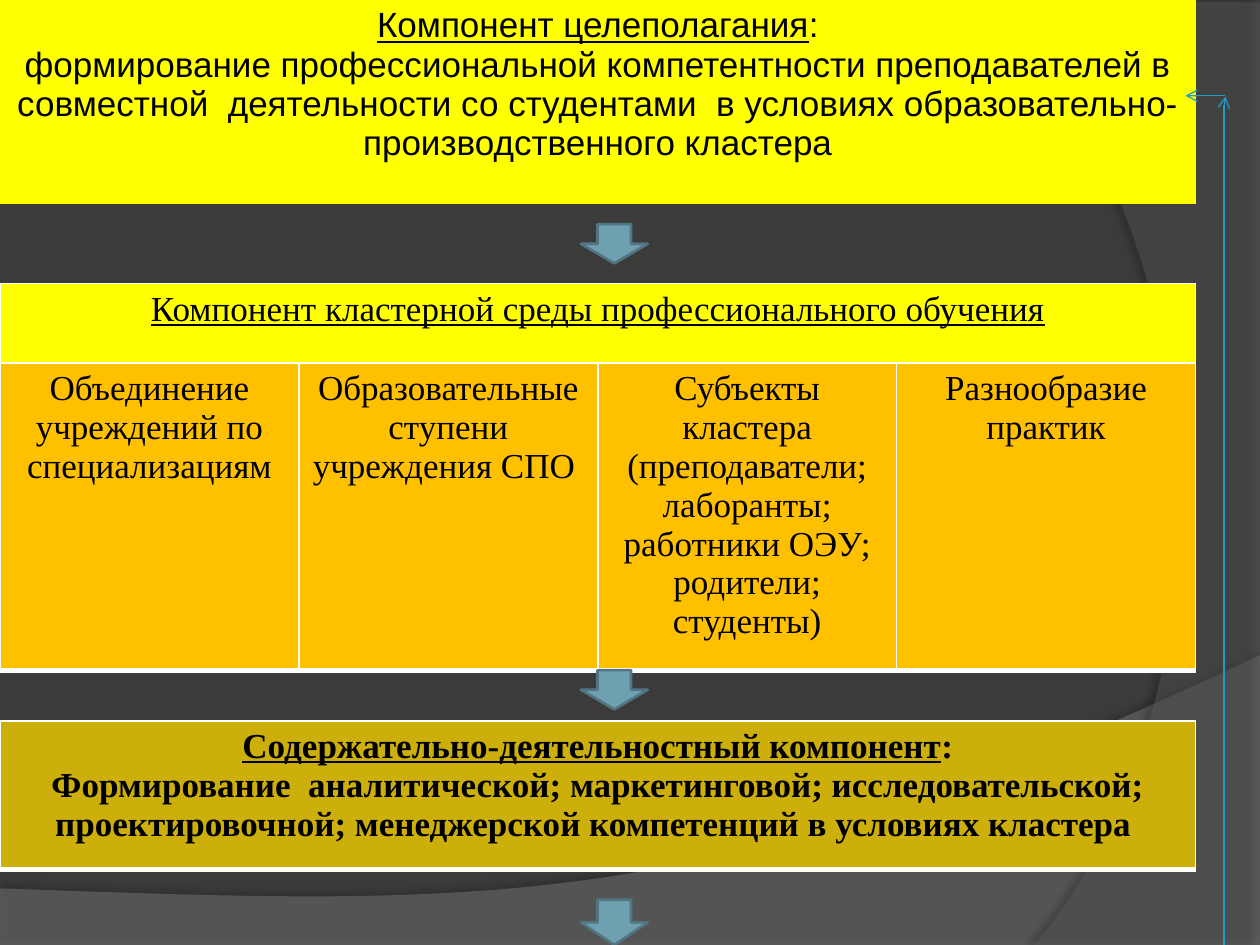
from lxml.etree import SubElement
from pptx import Presentation
from pptx.dml.color import RGBColor
from pptx.enum.shapes import MSO_CONNECTOR, MSO_SHAPE
from pptx.enum.text import PP_ALIGN
from pptx.oxml import parse_xml
from pptx.oxml.ns import nsdecls, qn
from pptx.util import Cm, Pt

THEME = {
    "background": "3B3B3B", "wave": "7F7F7F", "side": "5E5E5E", "shadow": "000000",
    "text": "000000", "border": "FFFFFF", "yellow": "FFFF00", "orange": "FFC000",
    "olive": "CCAF0A", "arrow": "6EA0B0", "arrow_line": "517682", "link": "239BC2",
    "size": Pt(20), "sans": "Arial", "serif": "Times New Roman",
}


def rgb(name):
    return RGBColor.from_string(THEME[name])


def finish_connector(c):
    c.line.color.rgb = rgb("link")
    c.line.width = Pt(0.75)
    SubElement(c.line._get_or_add_ln(), qn("a:tailEnd"), type="arrow")
    SubElement(c.element.spPr, qn("a:effectLst"))


prs = Presentation()
prs.slide_width, prs.slide_height = Cm(25.4), Cm(19.05)
s = prs.slides.add_slide(prs.slide_layouts[6])
s.background.fill.solid()
s.background.fill.fore_color.rgb = rgb("background")

backdrops = [
    ("wave", 45, [(0, 17.91), (0, 19.08), (25.4, 19.08)],
     [(25.4, 13.21), (14.2, 18.52), (9.93, 18.26), (0, 17.91)], (35, 3.5, 270)),
    ("side", 40, [(25.4, 0.05), (25.4, 19.05)],
     [(20.85, 19.05), (23.75, 15.72), (25.86, 7.62), (20.32, 0)], (45, 4, 180)),
]
steps = 40
for color, alpha, corners, curve, (shadow_alpha, distance, angle) in backdrops:
    points = list(corners)
    for i in range(steps + 1):
        t = i / steps
        weights = ((1 - t) ** 3, 3 * t * (1 - t) ** 2, 3 * t ** 2 * (1 - t), t ** 3)
        points.append(tuple(sum(w * q[axis] for w, q in zip(weights, curve)) for axis in (0, 1)))
    points = [(Cm(x), Cm(y)) for x, y in points]
    builder = s.shapes.build_freeform(*points[0])
    builder.add_line_segments(points[1:], close=True)
    sp = builder.convert_to_shape()
    sp.fill.solid()
    sp.fill.fore_color.rgb = rgb(color)
    sp.line.fill.background()
    sp.shadow.inherit = False
    fill = sp.element.spPr.find(qn("a:solidFill"))
    SubElement(fill[0], qn("a:alpha"), val=str(alpha * 1000))
    sp.element.spPr.find(qn("a:effectLst")).append(parse_xml(
        f'<a:outerShdw {nsdecls("a")} blurRad="{Pt(4)}" dist="{Pt(distance)}" '
        f'dir="{angle * 60000}" algn="ctr" rotWithShape="0">'
        f'<a:srgbClr val="{THEME["shadow"]}"><a:alpha val="{shadow_alpha * 1000}"/></a:srgbClr>'
        f'</a:outerShdw>'))

tables = [
    (0, 4.11, "yellow", "sans", False, False, [[
        [("Компонент целеполагания", True), (":", False)],
        [("формирование профессиональной компетентности преподавателей в совместной  "
          "деятельности со студентами  в условиях образовательно-производственного кластера",
          False)],
    ]]),
    (5.72, 1.8, "yellow", "serif", False, True, [[
        [("Компонент кластерной среды профессионального обучения", True)],
    ]]),
    (7.32, 6.2, "orange", "serif", False, True, [
        [[("Объединение учреждений по специализациям", False)]],
        [[("Образовательные ступени учреждения СПО ", False)]],
        [[("Субъекты кластера (преподаватели; лаборанты; работники ОЭУ; родители; студенты)",
           False)]],
        [[("Разнообразие практик", False)]],
    ]),
    (14.53, 3, "olive", "serif", True, True, [[
        [("Содержательно-деятельностный компонент", True), (":", False)],
        [("Формирование  аналитической; маркетинговой; исследовательской; проектировочной; "
          "менеджерской компетенций в условиях кластера ", False)],
    ]]),
]
borders = {"lnL": 1, "lnR": 1, "lnT": 1, "lnB": 3}
for top, height, color, font, bold, bordered, cells in tables:
    table = s.shapes.add_table(1, len(cells), 0, Cm(top), Cm(24.1), Cm(height)).table
    table.first_row = table.horz_banding = False
    for cell, paragraphs in zip(table.rows[0].cells, cells):
        cell.fill.solid()
        cell.fill.fore_color.rgb = rgb(color)
        tc_pr = cell._tc.get_or_add_tcPr()
        paint = (f'<a:solidFill><a:srgbClr val="{THEME["border"]}"/></a:solidFill>'
                 if bordered else "<a:noFill/>")
        for i, (side, width) in enumerate(borders.items()):
            tc_pr.insert(i, parse_xml(
                f'<a:{side} {nsdecls("a")} w="{Pt(width)}">{paint}</a:{side}>'))
        tf = cell.text_frame
        for i, runs in enumerate(paragraphs):
            p = tf.add_paragraph() if i else tf.paragraphs[0]
            p.alignment = PP_ALIGN.CENTER
            for text, underline in runs:
                r = p.add_run()
                r.text = text
                r.font.color.rgb = rgb("text")
                style = {"name": THEME[font], "size": THEME["size"],
                         "bold": bold, "underline": underline}
                for key, value in style.items():
                    setattr(r.font, key, value)

for top, height in [(4.52, 0.79), (13.51, 0.79), (18.14, 0.91)]:
    sp = s.shapes.add_shape(MSO_SHAPE.DOWN_ARROW, Cm(11.71), Cm(top), Cm(1.35), Cm(height))
    sp.shadow.inherit = False
    sp.fill.solid()
    sp.fill.fore_color.rgb = rgb("arrow")
    sp.line.color.rgb = rgb("arrow_line")
    sp.line.width = Pt(1.5)

riser = s.shapes.add_connector(MSO_CONNECTOR.ELBOW, Cm(33.25), Cm(10.52), Cm(16.13), Cm(10.49))
riser.element.spPr.find(qn("a:xfrm")).set("rot", str(90 * 60000))
adjustments = riser.element.spPr.find(qn("a:prstGeom")).find(qn("a:avLst"))
SubElement(adjustments, qn("a:gd"), name="adj1", fmla="val 99800")
finish_connector(riser)

pointer = s.shapes.add_connector(MSO_CONNECTOR.STRAIGHT, Cm(24.69), Cm(1.93), Cm(23.9), Cm(1.93))
finish_connector(pointer)

prs.save("out.pptx")
